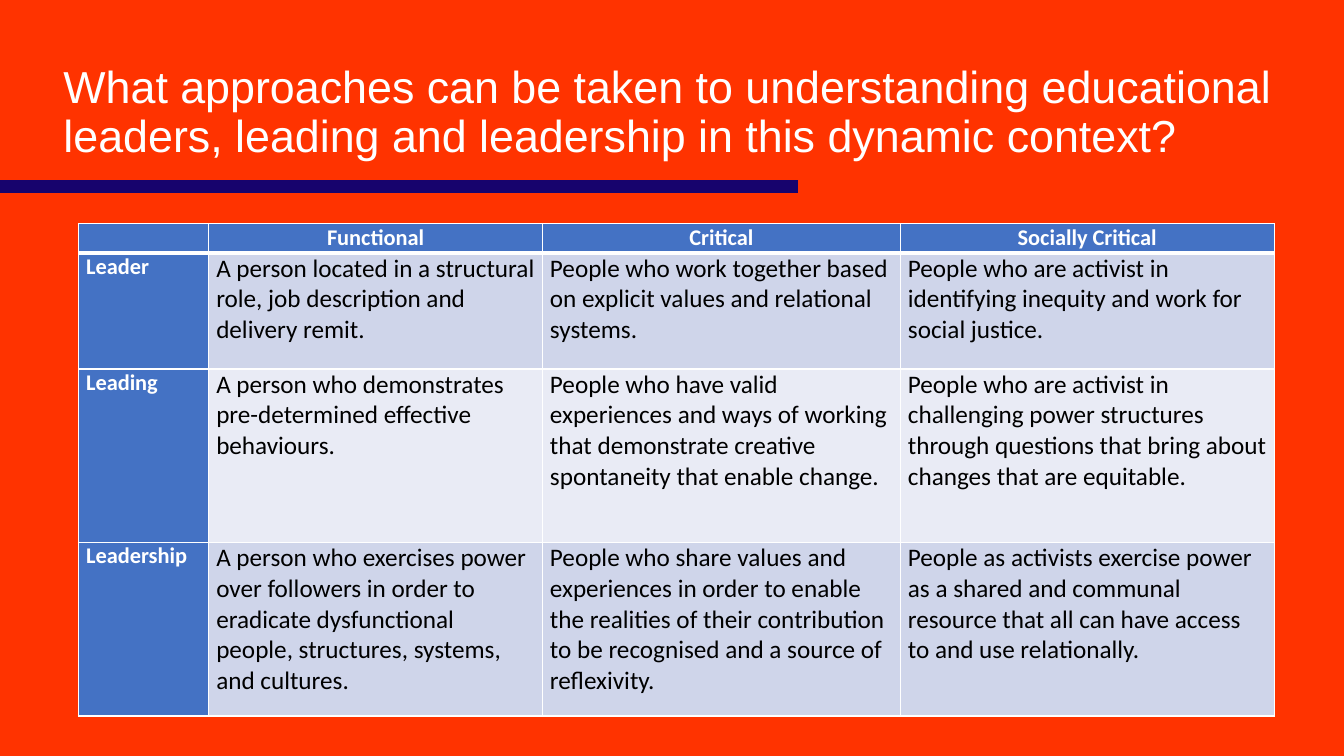
from lxml import etree
from pptx import Presentation, util as u
from pptx.dml.color import RGBColor
from pptx.enum import shapes, text
from pptx.oxml import parse_xml
from pptx.oxml.ns import nsdecls, qn

RED = RGBColor(0xFF, 0x33, 0x00)
NAVY = RGBColor(0x17, 0x03, 0x6D)
BLUE = RGBColor(0x44, 0x72, 0xC4)
WHITE = RGBColor(0xFF, 0xFF, 0xFF)
BLACK = RGBColor(0, 0, 0)
BANDS = RGBColor(0xCF, 0xD5, 0xEA), RGBColor(0xE9, 0xEB, 0xF5)

TITLE = ("What approaches can be taken to understanding educational "
         "leaders, leading and leadership in this dynamic context?")
COLS = [3.28, 8.41, 9.02, 9.42]
ROWS = [0.74, 2.92, 4.37, 4.37]
VIEWS = [
    ["", "Functional", "Critical", "Socially Critical"],
    ["Leader",
     "A person located in a structural role, job description and delivery remit.",
     "People who work together based on explicit values and relational systems.",
     "People who are activist in identifying inequity and work for social justice."],
    ["Leading",
     "A person who demonstrates pre-determined effective behaviours.",
     "People who have valid experiences and ways of working that demonstrate "
     "creative spontaneity that enable change.",
     "People who are activist in challenging power structures through questions "
     "that bring about changes that are equitable."],
    ["Leadership",
     "A person who exercises power over followers in order to eradicate "
     "dysfunctional people, structures, systems, and cultures.",
     "People who share values and experiences in order to enable the realities of "
     "their contribution to be recognised and a source of reflexivity.",
     "People as activists exercise power as a shared and communal resource that "
     "all can have access to and use relationally."],
]


def style(para, name, size, color, bold=False):
    """Format every run of a paragraph."""
    for run in para.runs:
        font = run.font
        font.name, font.size, font.bold = name, u.Pt(size), bold
        font.color.rgb = color


def edge(cell, top, base):
    """Give a cell white borders with the given top and bottom widths."""
    props = cell._tc.get_or_add_tcPr()
    for i, (side, width) in enumerate(zip("LRTB", (1, 1, top, base))):
        props.insert(i, parse_xml(
            f'<a:ln{side} {nsdecls("a")} w="{u.Pt(width)}"><a:solidFill>'
            f'<a:srgbClr val="{WHITE}"/></a:solidFill></a:ln{side}>'))


def fill_cell(cell, words, row, col):
    """Write and colour one cell by its place in the grid."""
    head = row == 0 or col == 0
    cell.margin_left = cell.margin_right = u.Cm(0.19)
    cell.margin_top = cell.margin_bottom = 0
    cell.fill.solid()
    cell.fill.fore_color.rgb = BLUE if head else BANDS[(row - 1) % 2]
    edge(cell, 3 if row == 1 else 1, 3 if row == 0 else 1)
    para = cell.text_frame.paragraphs[0]
    if words:
        para.text = words
        style(para, "Calibri", 16 if head else 18, WHITE if head else BLACK, head)
    else:
        etree.SubElement(para._p, qn("a:endParaRPr"), sz="1600")
    if row == 0:
        para.alignment = text.PP_ALIGN.CENTER


def add_title(slide, left, top, width, height):
    """Place the title in its box and the navy rule along its foot."""
    box = slide.shapes.add_textbox(u.Cm(left), u.Cm(top), u.Cm(width), u.Cm(height))
    frame = box.text_frame
    frame.word_wrap = True
    frame.vertical_anchor = text.MSO_ANCHOR.MIDDLE
    frame.text = TITLE
    para = frame.paragraphs[0]
    para.line_spacing = 0.9
    style(para, "Arial", 32, WHITE)
    foot = u.Cm(top + height)
    rule = slide.shapes.add_connector(
        shapes.MSO_CONNECTOR.STRAIGHT, 0, foot, u.Cm(20.12), foot)
    rule.line.color.rgb = NAVY
    rule.line.width = u.Pt(8.75)
    etree.SubElement(rule._element.spPr, qn("a:effectLst"))


def add_grid(slide, left, top):
    """Place the table of views with its corner at the given point."""
    table = slide.shapes.add_table(
        len(ROWS), len(COLS), u.Cm(left), u.Cm(top),
        u.Cm(sum(COLS)), u.Cm(sum(ROWS))).table
    for col, width in zip(table.columns, COLS):
        col.width = u.Cm(width)
    for row, height in zip(table.rows, ROWS):
        row.height = u.Cm(height)
    for r, line in enumerate(VIEWS):
        for c, words in enumerate(line):
            fill_cell(table.cell(r, c), words, r, c)


def main():
    """Build the slide and save it."""
    deck = Presentation()
    deck.slide_width, deck.slide_height = u.Cm(33.87), u.Cm(19.05)
    slide = deck.slides.add_slide(deck.slide_layouts[6])
    back = slide.background.fill
    back.solid()
    back.fore_color.rgb = RED
    add_title(slide, 1.35, 1.02, 31.47, 3.68)
    add_grid(slide, 1.98, 5.64)
    deck.save("out.pptx")


if __name__ == "__main__":
    main()
